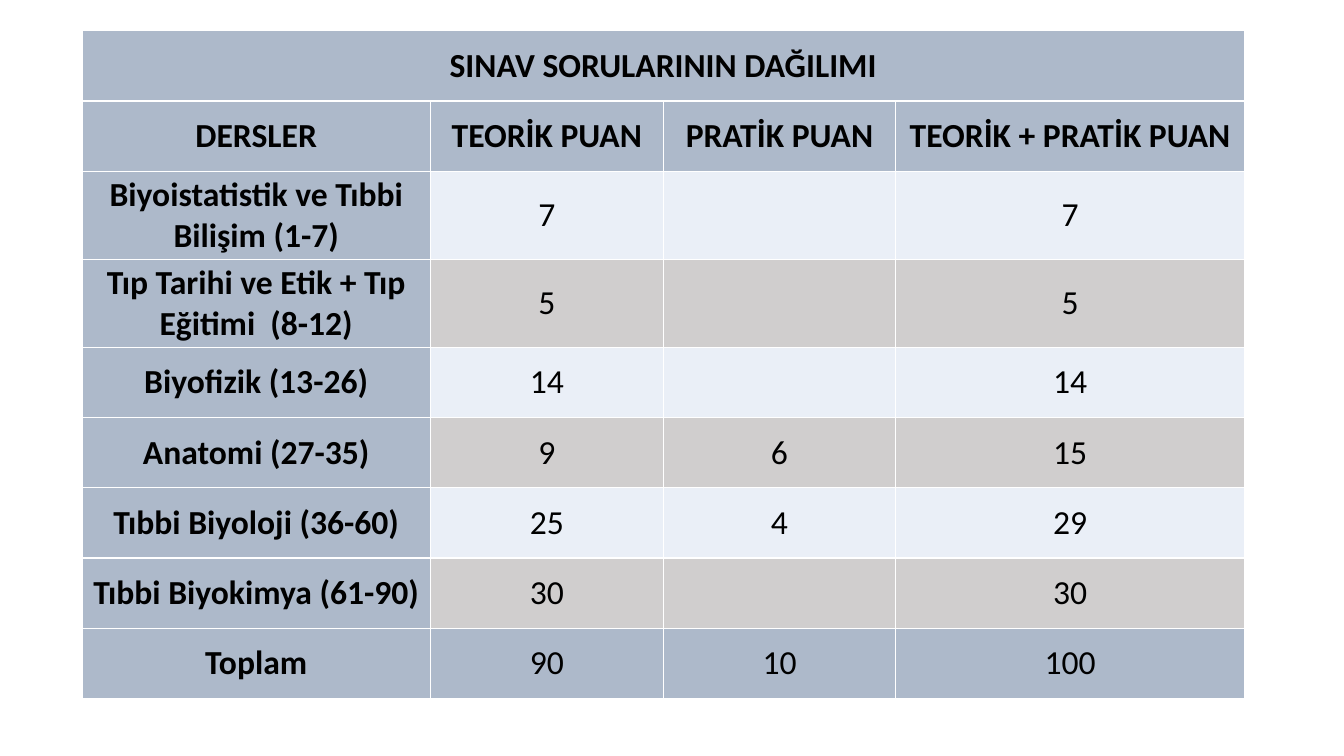
from lxml import etree
from pptx import Presentation
from pptx.dml.color import RGBColor
from pptx.enum.text import MSO_ANCHOR, PP_ALIGN
from pptx.oxml.ns import qn
from pptx.util import Pt

CENTER, MIDDLE = PP_ALIGN.CENTER, MSO_ANCHOR.MIDDLE

ROWS = [
    ("SINAV SORULARININ DAĞILIMI", "", "", ""),
    ("DERSLER", "TEORİK PUAN", "PRATİK PUAN", "TEORİK + PRATİK PUAN"),
    ("Biyoistatistik ve Tıbbi Bilişim (1-7)", "7", "", "7"),
    ("Tıp Tarihi ve Etik + Tıp Eğitimi  (8-12)", "5", "", "5"),
    ("Biyofizik (13-26)", "14", "", "14"),
    ("Anatomi (27-35)", "9", "6", "15"),
    ("Tıbbi Biyoloji (36-60)", "25", "4", "29"),
    ("Tıbbi Biyokimya (61-90)", "30", "", "30"),
    ("Toplam", "90", "10", "100"),
]
HEADER_ROWS = 2
TWO_LINE_ROWS = (2, 3)
LEFT, TOP = 58.5, 22
COL_WIDTHS = (249, 166.2, 166.2, 249)
ROW_HEIGHT, TWO_LINE_HEIGHT = 50.2, 62.9
HEADER_FILL, BAND_FILLS, BORDER = "ADB9CA", ("EAEFF7", "D0CECE"), "FFFFFF"


def rgb(value):
    return RGBColor.from_string(value)


def add_borders(cell):
    tc_pr = cell._tc.get_or_add_tcPr()
    for i, side in enumerate(("lnL", "lnR", "lnT", "lnB")):
        ln = etree.Element(qn("a:" + side), w=str(Pt(1)))
        fill = etree.SubElement(ln, qn("a:solidFill"))
        etree.SubElement(fill, qn("a:srgbClr"), val=BORDER)
        tc_pr.insert(i, ln)


def format_cell(cell, text, fill, bold):
    cell.text = text
    cell.vertical_anchor = MIDDLE
    cell.margin_left = cell.margin_right = cell.margin_top = cell.margin_bottom = 0
    cell.fill.solid()
    cell.fill.fore_color.rgb = rgb(fill)
    add_borders(cell)
    p = cell.text_frame.paragraphs[0]
    p.alignment = CENTER
    p.font.name, p.font.size, p.font.bold = "Calibri", Pt(24), bold
    p.font.color.rgb = rgb("000000")


prs = Presentation()
prs.slide_width, prs.slide_height = Pt(960), Pt(540)
s = prs.slides.add_slide(prs.slide_layouts[6])

heights = [TWO_LINE_HEIGHT if r in TWO_LINE_ROWS else ROW_HEIGHT for r in range(len(ROWS))]
table = s.shapes.add_table(len(ROWS), len(COL_WIDTHS), Pt(LEFT), Pt(TOP),
                           Pt(sum(COL_WIDTHS)), Pt(sum(heights))).table
for column, width in zip(table.columns, COL_WIDTHS):
    column.width = Pt(width)
for row, height in zip(table.rows, heights):
    row.height = Pt(height)

for r, texts in enumerate(ROWS):
    for c, text in enumerate(texts):
        bold = r < HEADER_ROWS or c == 0
        shaded = bold or r == len(ROWS) - 1
        format_cell(table.cell(r, c), text, HEADER_FILL if shaded else BAND_FILLS[r % 2], bold)
table.cell(0, 0).merge(table.cell(0, len(COL_WIDTHS) - 1))

prs.save("out.pptx")
